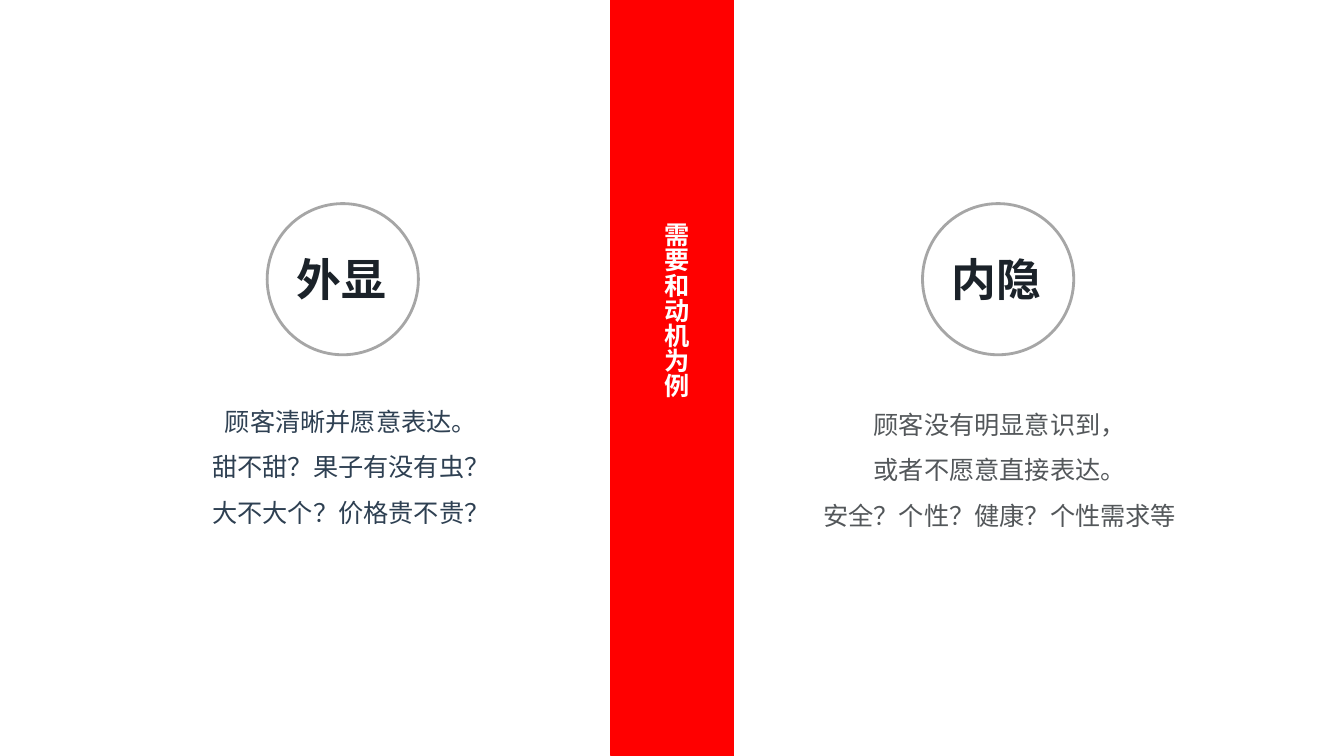
"""Builds a slide contrasting explicit and implicit customer needs."""
import dataclasses

import pptx
import pptx.dml.color
import pptx.enum.shapes
import pptx.enum.text
import pptx.oxml.ns
import pptx.util
from lxml import etree

Inches = pptx.util.Inches
ALIGN = pptx.enum.text.PP_ALIGN
SHAPE = pptx.enum.shapes.MSO_SHAPE


@dataclasses.dataclass(frozen=True)
class Theme:
    latin: str = "Roboto"
    cjk: str = "Noto Sans CJK SC"
    title_size: int = 32
    body_size: int = 18
    title: str = "1B2229"
    explicit: str = "2E4052"
    implicit: str = "53575A"
    ring: str = "A6A6A6"
    band: str = "FF0000"
    band_text: str = "FFFFFF"


THEME = Theme()


def rgb(value):
    return pptx.dml.color.RGBColor.from_string(value)


def add_shape(shapes, kind, box, line, width, fill=None):
    sp = shapes.add_shape(kind, *map(Inches, box))
    sp.shadow.inherit = False
    if fill:
        sp.fill.solid()
        sp.fill.fore_color.rgb = rgb(fill)
    else:
        sp.fill.background()
    sp.line.color.rgb = rgb(line)
    sp.line.width = pptx.util.Pt(width)


def add_text(shapes, box, lines, size, color, font=THEME.latin, bold=False,
             align=ALIGN.LEFT, spacing=None, wrap=True, vertical=False):
    tf = shapes.add_textbox(*map(Inches, box)).text_frame
    tf.word_wrap = wrap
    tf.auto_size = pptx.enum.text.MSO_AUTO_SIZE.SHAPE_TO_FIT_TEXT
    if vertical:
        tf._txBody.bodyPr.set("vert", "eaVert")
    for i, line in enumerate(lines):
        p = tf.add_paragraph() if i else tf.paragraphs[0]
        p.alignment = align
        p.line_spacing = spacing
        r = p.add_run()
        r.text = line
        r.font.size = pptx.util.Pt(size)
        r.font.bold = bold
        r.font.color.rgb = rgb(color)
        r.font.name = font
        ea = etree.SubElement(r.font._element, pptx.oxml.ns.qn("a:ea"))
        ea.set("typeface", THEME.cjk)


def add_badge(shapes, left, label):
    group = shapes.add_group_shape().shapes
    add_shape(group, SHAPE.OVAL, (left, 2.02, 1.5, 1.5), THEME.ring, 2)
    add_text(group, (left + 0.19, 2.45, 1.1, 0.64), [label],
             THEME.title_size, THEME.title, bold=True, wrap=False)


def add_description(shapes, left, top, width, lines, color):
    add_text(shapes, (left, top, width, 1.46), lines, THEME.body_size, color,
             align=ALIGN.CENTER, spacing=1.5)


def add_band(shapes, label):
    add_shape(shapes, SHAPE.RECTANGLE, (6.06, 0, 1.22, 7.5),
              THEME.band, 0.75, THEME.band)
    add_text(shapes, (6.41, 2.11, 0.5, 3.29), [label], THEME.body_size,
             THEME.band_text, font=THEME.cjk, bold=True,
             align=ALIGN.JUSTIFY, vertical=True)


def main():
    prs = pptx.Presentation()
    prs.slide_width, prs.slide_height = Inches(13.33), Inches(7.5)
    shapes = prs.slides.add_slide(prs.slide_layouts[6]).shapes
    add_description(shapes, 1.71, 3.83, 3.54, [
        "顾客清晰并愿意表达。",
        "甜不甜？果子有没有虫？",
        "大不大个？价格贵不贵？",
    ], THEME.explicit)
    add_badge(shapes, 2.65, "外显")
    add_badge(shapes, 9.15, "内隐")
    add_description(shapes, 7.83, 3.86, 4.17, [
        "顾客没有明显意识到，",
        "或者不愿意直接表达。",
        "安全？个性？健康？个性需求等",
    ], THEME.implicit)
    add_band(shapes, "需要和动机为例")
    prs.save("out.pptx")


if __name__ == "__main__":
    main()
